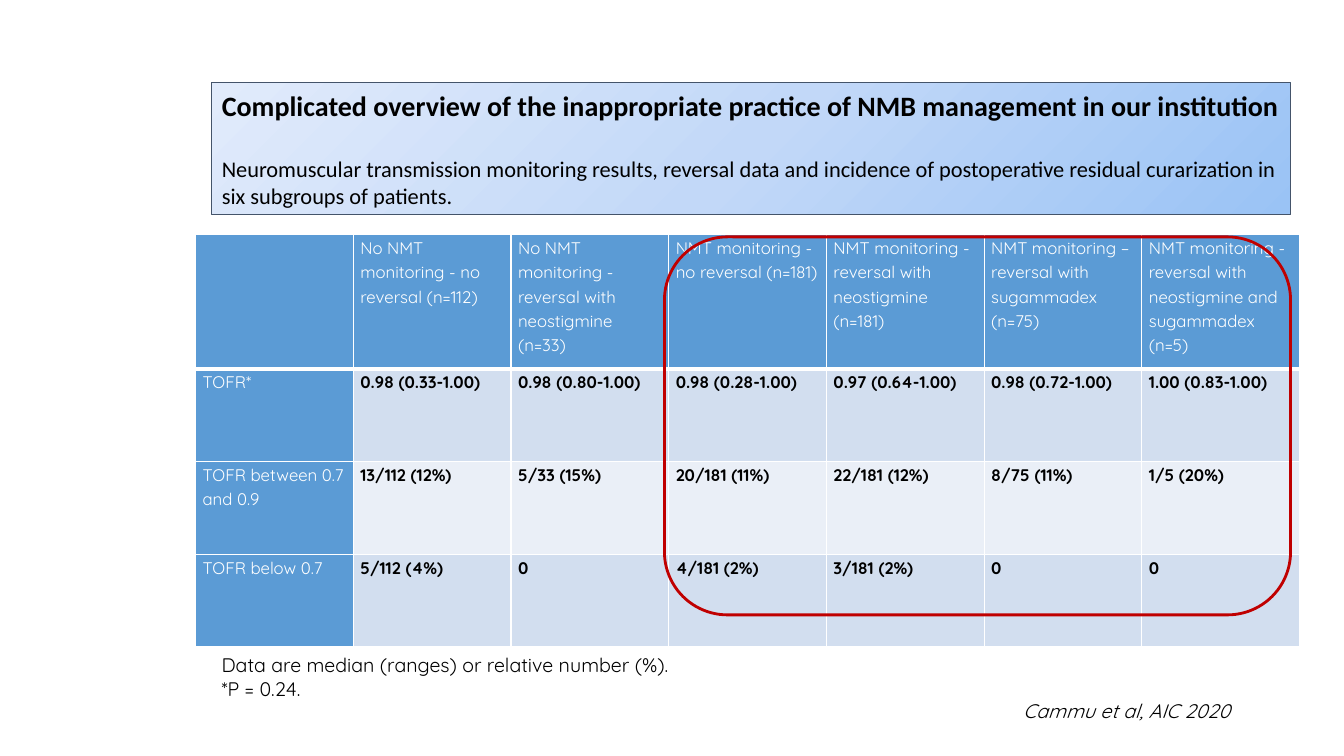
from lxml.etree import SubElement
from pptx import Presentation
from pptx.dml.color import RGBColor
from pptx.enum.shapes import MSO_SHAPE
from pptx.enum.text import MSO_ANCHOR, PP_ALIGN
from pptx.oxml.ns import qn
from pptx.util import Emu, Pt

PX = 9144  # 100 px to the inch
COLORS = {
    "white": "FFFFFF", "black": "000000", "header": "5B9BD5",
    "band_dark": "D2DEEF", "band_light": "EAEFF7",
    "title_line": "44546A", "highlight": "C00000",
}
TITLE_STOPS = [(0, "9AC3F5"), (50, "C2D8F8"), (100, "E1EBFB")]
TITLE = "Complicated overview of the inappropriate practice of NMB management in our institution"
SUBTITLE = ("Neuromuscular transmission monitoring results, reversal data and incidence of "
            "postoperative residual curarization in six subgroups of patients.")
RESULTS = [
    ["", "No NMT monitoring - no reversal (n=112)",
     "No NMT monitoring - reversal with neostigmine (n=33)",
     "NMT monitoring - no reversal (n=181)",
     "NMT monitoring - reversal with neostigmine (n=181)",
     "NMT monitoring – reversal with sugammadex (n=75)",
     "NMT monitoring - reversal with neostigmine and sugammadex (n=5)"],
    ["TOFR*", "0.98 (0.33-1.00)", "0.98 (0.80-1.00)", "0.98 (0.28-1.00)",
     "0.97 (0.64-1.00)", "0.98 (0.72-1.00)", "1.00 (0.83-1.00)"],
    ["TOFR between 0.7 and 0.9", "13/112 (12%)", "5/33 (15%)", "20/181 (11%)",
     "22/181 (12%)", "8/75 (11%)", "1/5 (20%)"],
    ["TOFR below 0.7", "5/112 (4%)", "0", "4/181 (2%)", "3/181 (2%)", "0", "0"],
]


def color(name):
    return RGBColor.from_string(COLORS[name])


def emu(box):
    return [Emu(round(length * PX)) for length in box]


def write(para, text, font="Quicksand", size=14, fill="black", bold=False,
          italic=False, spacing=None, before=0, after=0):
    para.alignment = PP_ALIGN.LEFT
    para.space_before, para.space_after = Pt(before), Pt(after)
    para.line_spacing = spacing
    span = para.add_run()
    span.text = text
    span.font.name, span.font.size = font, Pt(size)
    span.font.bold, span.font.italic = bold, italic
    span.font.color.rgb = color(fill)


def add_title(page, box):
    title = page.shapes.title
    title.left, title.top, title.width, title.height = emu(box)
    # Three-stop diagonal gradient
    title.fill.gradient()
    title.fill.gradient_angle = 135
    stops = next(title.element.iter(qn("a:gsLst")))
    for stop in list(stops):
        stops.remove(stop)
    for position, value in TITLE_STOPS:
        stop = SubElement(stops, qn("a:gs"), pos=str(position * 1000))
        SubElement(stop, qn("a:srgbClr"), val=value)
    title.line.color.rgb = color("title_line")
    title.line.width = Pt(0.75)
    # Heading and description
    frame = title.text_frame
    frame.word_wrap = True
    frame.vertical_anchor = MSO_ANCHOR.MIDDLE
    write(frame.paragraphs[0], TITLE, font="Calibri", size=20, bold=True)
    write(frame.add_paragraph(), SUBTITLE, font="Calibri", size=16, before=24)


def add_borders(cell, bottom):
    properties = cell._tc.get_or_add_tcPr()
    sides = [("a:lnL", 1), ("a:lnR", 1), ("a:lnT", 1), ("a:lnB", bottom)]
    for index, (side, width) in enumerate(sides):
        line = SubElement(properties, qn(side), w=str(Pt(width)))
        SubElement(SubElement(line, qn("a:solidFill")), qn("a:srgbClr"), val=COLORS["white"])
        properties.insert(index, line)


def add_results(page, box, header_height):
    row_count, column_count = len(RESULTS), len(RESULTS[0])
    table = page.shapes.add_table(row_count, column_count, *emu(box)).table
    table.horz_banding = False
    body_height = (box[3] - header_height) / (row_count - 1)
    for index, row in enumerate(table.rows):
        row.height = Emu(round((body_height if index else header_height) * PX))
    for row_index, row in enumerate(RESULTS):
        for column_index, text in enumerate(row):
            cell = table.cell(row_index, column_index)
            heading = row_index == 0 or column_index == 0
            band = "band_dark" if row_index % 2 else "band_light"
            cell.fill.solid()
            cell.fill.fore_color.rgb = color("header" if heading else band)
            cell.margin_left = cell.margin_right = Emu(7 * PX)
            cell.margin_top = cell.margin_bottom = 0
            add_borders(cell, bottom=1 if row_index else 3)
            if text:
                write(cell.text_frame.paragraphs[0], text, size=12, bold=not heading,
                      fill="white" if heading else "black", spacing=1.15, after=10)


def add_note(page, box, lines, **text_format):
    frame = page.shapes.add_textbox(*emu(box)).text_frame
    frame.word_wrap = True
    for index, line in enumerate(lines):
        para = frame.add_paragraph() if index else frame.paragraphs[0]
        write(para, line, **text_format)


def add_highlight(page, box):
    outline = page.shapes.add_shape(MSO_SHAPE.ROUNDED_RECTANGLE, *emu(box))
    outline.shadow.inherit = False
    outline.fill.background()
    outline.line.color.rgb = color("highlight")
    outline.line.width = Pt(2)


def main():
    deck = Presentation()
    deck.slide_width, deck.slide_height = emu((1333, 750))
    page = deck.slides.add_slide(deck.slide_layouts[5])
    add_title(page, (210, 82, 1070, 131))
    add_results(page, (194, 233, 1095, 409), header_height=133)
    add_note(page, (1005, 688, 291, 34), ["Cammu et al, AIC 2020"], italic=True)
    add_note(page, (210, 643, 614, 57),
             ["Data are median (ranges) or relative number (%).", "*P = 0.24."])
    add_highlight(page, (659, 235, 621, 375))
    deck.save("out.pptx")


if __name__ == "__main__":
    main()
